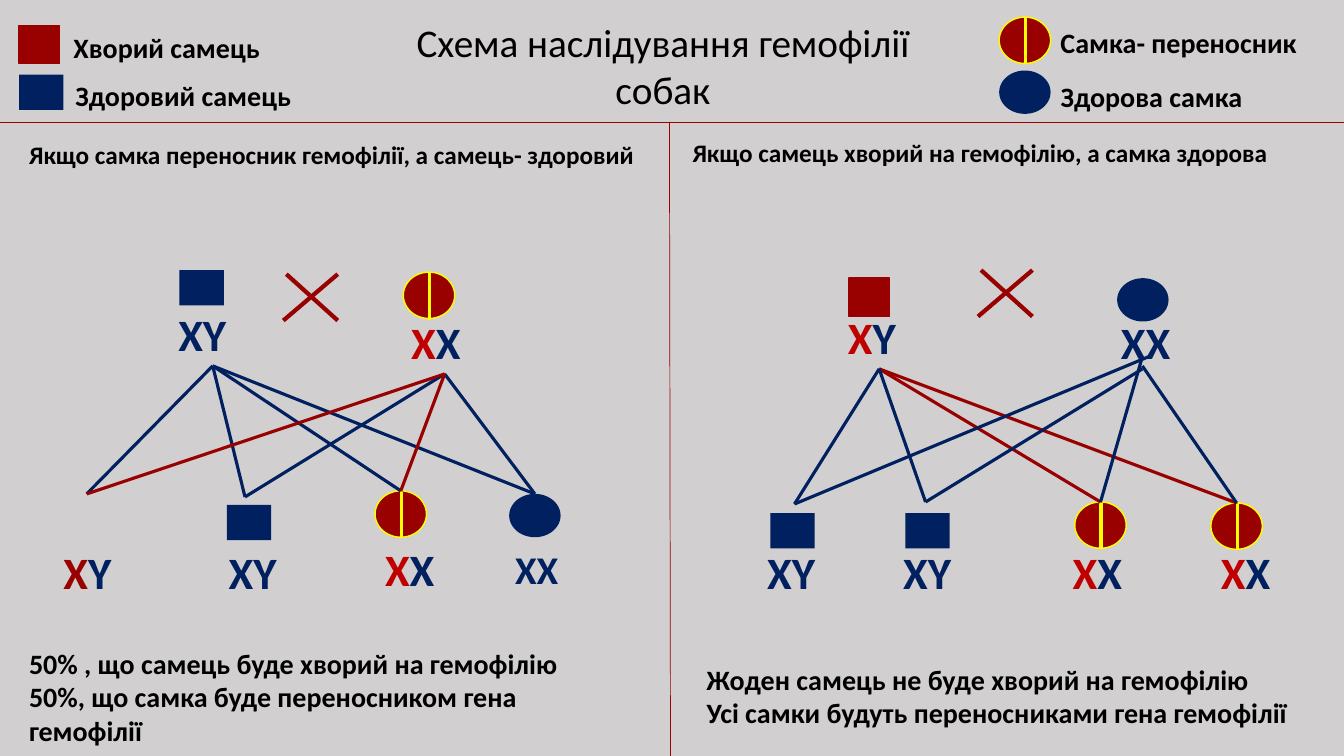
from lxml import etree
from pptx import Presentation
from pptx.dml.color import RGBColor
from pptx.enum.shapes import MSO_CONNECTOR, MSO_SHAPE
from pptx.enum.text import MSO_ANCHOR, MSO_AUTO_SIZE, PP_ALIGN
from pptx.oxml.ns import qn
from pptx.util import Pt

PX = 9144
FONT = "Calibri"
STRAIGHT = MSO_CONNECTOR.STRAIGHT
RECTANGLE = MSO_SHAPE.RECTANGLE
OVAL = MSO_SHAPE.OVAL
TOP_SITE, BOTTOM_SITE = 0, 2
COLOURS = {
    "page": "D1CFCF",
    "text": "000000",
    "sick": "990000",
    "healthy": "002060",
    "bright": "C00000",
    "split": "FFFF00",
}
SYMBOLS = {
    "sick male": (RECTANGLE, 40, 38, "sick", "sick"),
    "healthy male": (RECTANGLE, 44, 35, "healthy", None),
    "carrier": (OVAL, 51, 46, "sick", "split"),
    "healthy female": (OVAL, 51, 43, "healthy", None),
}
LEFT_CROSS = {
    "heading": ((19, 12, 632, 40), "Якщо самка переносник гемофілії, а самець- здоровий"),
    "conclusion": ((19, 515, 607, 111), [
        "50% , що самець буде хворий на гемофілію",
        "50%, що самка буде переносником гена гемофілії",
    ]),
    "times": (281, 151),
    "symbols": {
        "father symbol": ("healthy male", 178, 147),
        "mother symbol": ("carrier", 400, 149),
        "son": ("healthy male", 225, 380),
        "carrier daughter": ("carrier", 372, 366),
        "healthy daughter": ("healthy female", 505, 369),
    },
    "genotypes": {
        "father": ((167, 178, 88, 64), 32, [("ХY", "healthy")]),
        "mother": ((398, 186, 86, 64), 32, [("X", "bright"), ("X", "healthy")]),
        "sick son genes": ((53, 415, 111, 64), 32, [("X", "sick"), ("Y", "healthy")]),
        "son genes": ((217, 415, 84, 64), 32, [("XY", "healthy")]),
        "carrier genes": ((372, 412, 95, 64), 32, [("X", "bright"), ("X", "healthy")]),
        "daughter genes": ((501, 415, 90, 57), 28, [("XX", "healthy")]),
    },
    "gametes": [
        ("father", (86, 369), "healthy"),
        ("father", (243, 372), "healthy"),
        ("father", "carrier daughter", "healthy"),
        ("father", "healthy daughter", "healthy"),
        ("mother", "healthy daughter", "healthy"),
        ("mother", (243, 372), "healthy"),
        ("mother", (86, 369), "sick"),
        ("mother", "carrier daughter", "sick"),
    ],
}
RIGHT_CROSS = {
    "heading": ((12, 10, 642, 40), "Якщо самець хворий на гемофілію, а самка здорова"),
    "conclusion": ((26, 531, 614, 77), [
        "Жоден самець не буде хворий на гемофілію",
        "Усі самки будуть переносниками гена гемофілії",
    ]),
    "times": (305, 147),
    "symbols": {
        "father symbol": ("sick male", 177, 155),
        "mother symbol": ("healthy female", 443, 155),
        "first son": ("healthy male", 99, 388),
        "second son": ("healthy male", 233, 388),
        "first daughter": ("carrier", 401, 377),
        "second daughter": ("carrier", 536, 378),
    },
    "genotypes": {
        "father": ((166, 181, 82, 64), 32, [("X", "bright"), ("Y", "healthy")]),
        "mother": ((437, 186, 116, 64), 32, [("XX", "healthy")]),
        "first son genes": ((86, 415, 72, 64), 32, [("XY", "healthy")]),
        "second son genes": ((221, 415, 72, 64), 32, [("XY", "healthy")]),
        "first daughter genes": ((389, 415, 95, 64), 32, [("X", "bright"), ("X", "healthy")]),
        "second daughter genes": ((536, 414, 95, 64), 32, [("X", "bright"), ("X", "healthy")]),
    },
    "gametes": [
        ("father", "second daughter", "sick"),
        ("father", "first daughter", "sick"),
        ("father", (253, 377), "healthy"),
        ("father", (123, 379), "healthy"),
        ((468, 242), "second daughter", "healthy"),
        ((468, 233), "first daughter", "healthy"),
        ((468, 245), (253, 377), "healthy"),
        ((474, 233), (123, 379), "healthy"),
    ],
}


def rgb(name):
    return RGBColor.from_string(COLOURS[name])


def shift(origin, box):
    return (origin[0] + box[0], origin[1] + box[1], *box[2:])


def add_line(page, start, end, colour, width):
    line = page.shapes.add_connector(STRAIGHT, *(value * PX for value in (*start, *end)))
    line.line.color.rgb = rgb(colour)
    line.line.width = Pt(width)
    etree.SubElement(line._element.spPr, qn("a:effectLst"))
    return line


def add_text(page, box, paragraphs, size):
    frame = page.shapes.add_textbox(*(value * PX for value in box))
    frame.text_frame.word_wrap = True
    for index, runs in enumerate(paragraphs):
        para = frame.text_frame.paragraphs[0] if index == 0 else frame.text_frame.add_paragraph()
        para.font.name = FONT
        para.font.size = Pt(size)
        para.font.bold = True
        for text, colour in runs:
            span = para.add_run()
            span.text = text
            span.font.color.rgb = rgb(colour)
    return frame


def add_symbol(page, kind, left, top):
    preset, width, height, fill, outline = SYMBOLS[kind]
    symbol = page.shapes.add_shape(preset, left * PX, top * PX, width * PX, height * PX)
    symbol.shadow.inherit = False
    symbol.fill.solid()
    symbol.fill.fore_color.rgb = rgb(fill)
    if outline:
        symbol.line.color.rgb = rgb(outline)
        symbol.line.width = Pt(1)
    else:
        symbol.line.fill.background()
    if kind == "carrier":
        middle = left + 26
        add_line(page, (middle, top + 1), (middle, top + height + 1), "split", 2.25)
    return symbol


def add_header(page, box):
    left, top, width, height = box
    title = page.shapes.title
    title.left, title.top, title.width, title.height = (
        value * PX for value in shift(box, (352, 13, 611, 104)))
    frame = title.text_frame
    frame.text = "Схема наслідування гемофілії собак"
    frame.word_wrap = True
    frame.auto_size = MSO_AUTO_SIZE.NONE
    frame.vertical_anchor = MSO_ANCHOR.TOP
    para = frame.paragraphs[0]
    para.alignment = PP_ALIGN.CENTER
    para.font.name = FONT
    para.font.size = Pt(28)
    para.font.color.rgb = rgb("text")
    add_line(page, (left, top + height), (left + width, top + height), "sick", 0.5)
    legend = [
        ("sick male", (19, 25), "Хворий самець", (63, 25, 249, 44)),
        ("healthy male", (19, 74), "Здоровий самець", (65, 73, 247, 44)),
        ("carrier", (991, 17), "Самка- переносник", (1042, 20, 267, 44)),
        ("healthy female", (991, 70), "Здорова самка", (1042, 74, 212, 44)),
    ]
    for kind, spot, label, label_box in legend:
        add_symbol(page, kind, *shift(box, spot))
        add_text(page, shift(box, label_box), [[(label, "text")]], 20)


def add_cross(page, box, cross):
    heading_box, heading = cross["heading"]
    add_text(page, shift(box, heading_box), [[(heading, "text")]], 18)
    left, top = shift(box, cross["times"])
    add_line(page, (left + 54, top), (left, top + 46), "sick", 3)
    add_line(page, (left + 3, top), (left + 54, top + 46), "sick", 3)
    parts = {}
    for name, (kind, *spot) in cross["symbols"].items():
        parts[name] = add_symbol(page, kind, *shift(box, spot))
    for name, (gene_box, size, runs) in cross["genotypes"].items():
        parts[name] = add_text(page, shift(box, gene_box), [runs], size)
    for start, end, colour in cross["gametes"]:
        ends = [box[:2] if spot in parts else shift(box, spot) for spot in (start, end)]
        line = add_line(page, *ends, colour, 2.25)
        if start in parts:
            line.begin_connect(parts[start], BOTTOM_SITE)
        if end in parts:
            line.end_connect(parts[end], TOP_SITE)
    conclusion_box, sentences = cross["conclusion"]
    add_text(page, shift(box, conclusion_box), [[(text, "text")] for text in sentences], 20)


def main():
    deck = Presentation()
    deck.slide_width, deck.slide_height = 1333 * PX, 750 * PX
    page = deck.slides.add_slide(deck.slide_layouts[5])
    page.background.fill.solid()
    page.background.fill.fore_color.rgb = rgb("page")
    add_header(page, (0, 0, 1333, 121))
    add_line(page, (664, 121), (665, 750), "sick", 0.5)
    add_cross(page, (0, 121, 664, 629), LEFT_CROSS)
    add_cross(page, (665, 121, 668, 629), RIGHT_CROSS)
    deck.save("out.pptx")


if __name__ == "__main__":
    main()
